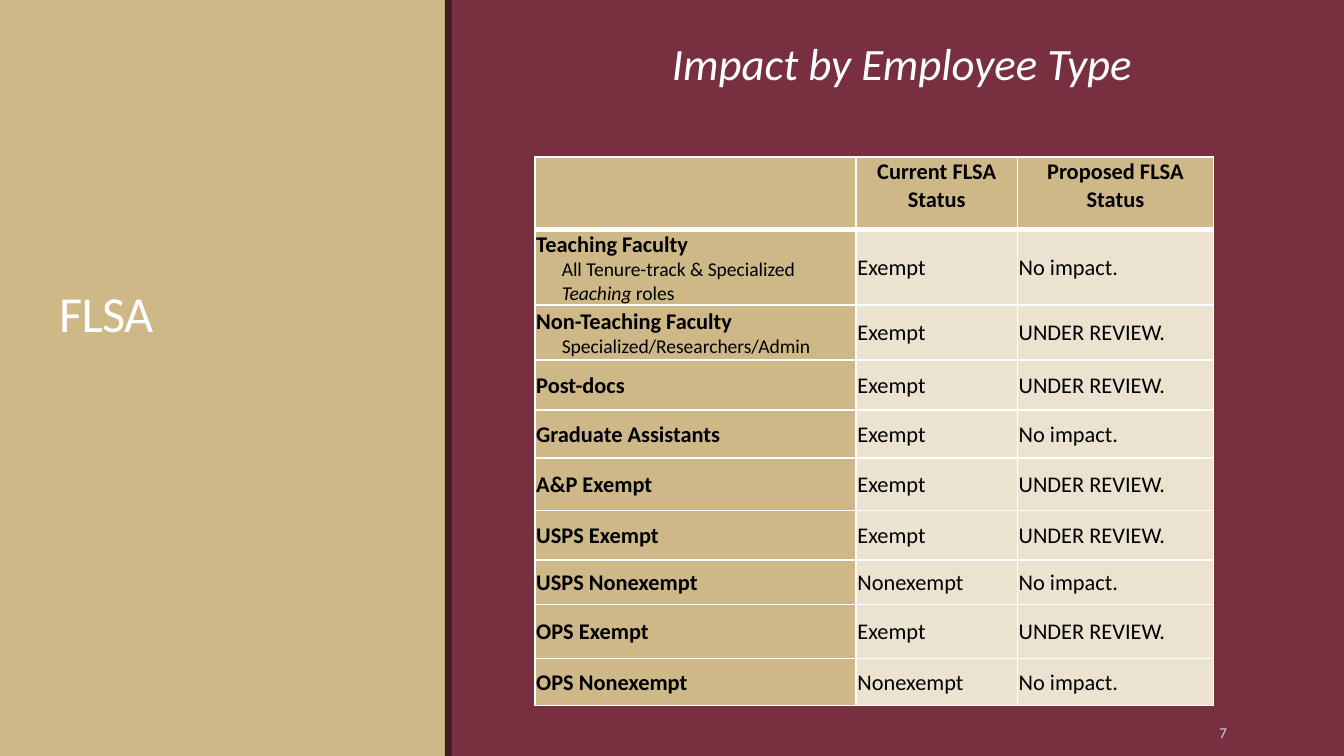
from lxml import etree
from pptx import Presentation
from pptx.dml.color import RGBColor
from pptx.enum import shapes, text
from pptx.oxml.ns import qn
from pptx.util import Inches, Pt

THEME = {
    "font": "Calibri",
    "maroon": "782F40", "dark": "421A24", "gold": "CEB888", "cream": "EBE3CF",
    "white": "FFFFFF", "black": "000000", "grey": "D9D9DB",
    "section": 27, "heading": 24, "body": 12, "detail": 10.5, "number": 8,
}

SECTION = "FLSA"
HEADING = "Impact by Employee Type"
PAGE_NUMBER = "7"
HEADERS = ["", "Current FLSA Status", "Proposed FLSA Status"]
NONE, REVIEW = "No impact.", "UNDER REVIEW."
# Employee type, detail lines (each a list of run text and italic), current, proposed, height
EMPLOYEES = [
    ("Teaching Faculty",
     [[("All Tenure-track & Specialized", False)],
      [("Teaching", True), (" roles", False)]], "Exempt", NONE, 0.56),
    ("Non-Teaching Faculty",
     [[("Specialized/Researchers/Admin", False)]], "Exempt", REVIEW, 0.41),
    ("Post-docs", [], "Exempt", REVIEW, 0.37),
    ("Graduate Assistants", [], "Exempt", NONE, 0.36),
    ("A&P Exempt", [], "Exempt", REVIEW, 0.39),
    ("USPS Exempt", [], "Exempt", REVIEW, 0.37),
    ("USPS Nonexempt", [], "Nonexempt", NONE, 0.33),
    ("OPS Exempt", [], "Exempt", REVIEW, 0.4),
    ("OPS Nonexempt", [], "Nonexempt", NONE, 0.35),
]
SLIDE_WIDTH = 10
SLIDE_HEIGHT = SLIDE_WIDTH * 9 / 16
COLUMN_WIDTHS = [2.39, 1.2, 1.46]
HEADER_HEIGHT = 0.54
DETAIL_INDENT = 0.19


def color(name):
    return RGBColor.from_string(THEME[name])


def style(run, size, ink, bold=False, italic=False):
    font = run.font
    font.name, font.size = THEME["font"], Pt(THEME[size])
    font.bold, font.italic = bold, italic
    font.color.rgb = color(ink)


def add_panel(slide, left, width, fill):
    panel = slide.shapes.add_shape(shapes.MSO_SHAPE.RECTANGLE, Inches(left), 0,
                                   Inches(width), Inches(SLIDE_HEIGHT))
    panel.shadow.inherit = False
    panel.fill.solid()
    panel.fill.fore_color.rgb = color(fill)
    panel.line.fill.background()


def add_label(slide, box, words, size, ink, align, anchor, insets, italic=False):
    label = slide.shapes.add_textbox(*map(Inches, box))
    frame = label.text_frame
    frame.word_wrap = True
    frame.vertical_anchor = anchor
    frame.margin_left = frame.margin_right = Inches(insets[0])
    frame.margin_top = frame.margin_bottom = Inches(insets[1])
    frame.text = words
    paragraph = frame.paragraphs[0]
    paragraph.alignment = align
    style(paragraph.runs[0], size, ink, italic=italic)
    return paragraph


def dress_cell(cell, fill, bottom=1, top=1):
    cell.margin_left = cell.margin_right = cell.margin_top = Inches(0.01)
    cell.margin_bottom = 0
    properties = cell._tc.get_or_add_tcPr()
    for side, width in zip("LRTB", (1, 1, top, bottom)):
        border = etree.SubElement(properties, qn(f"a:ln{side}"), w=str(Pt(width)))
        solid = etree.SubElement(border, qn("a:solidFill"))
        etree.SubElement(solid, qn("a:srgbClr"), val=THEME["white"])
    cell.fill.solid()
    cell.fill.fore_color.rgb = color(fill)


def fill_cell(cell, words, bold, align, anchor):
    cell.text = words
    cell.vertical_anchor = anchor
    paragraph = cell.text_frame.paragraphs[0]
    paragraph.alignment = align
    for run in paragraph.runs:
        style(run, "body", "black", bold=bold)


def add_details(cell, lines):
    for line in lines:
        paragraph = cell.text_frame.add_paragraph()
        paragraph._p.get_or_add_pPr().set("marL", str(Inches(DETAIL_INDENT)))
        for words, italic in line:
            run = paragraph.add_run()
            run.text = words
            style(run, "detail", "black", italic=italic)


def add_status_table(slide):
    heights = [HEADER_HEIGHT] + [employee[-1] for employee in EMPLOYEES]
    table = slide.shapes.add_table(
        len(heights), len(COLUMN_WIDTHS), Inches(3.98), Inches(1.17),
        Inches(sum(COLUMN_WIDTHS)), Inches(sum(heights))).table
    for column, width in zip(table.columns, COLUMN_WIDTHS):
        column.width = Inches(width)
    for row, height in zip(table.rows, heights):
        row.height = Inches(height)

    # Header row
    for col, header in enumerate(HEADERS):
        cell = table.cell(0, col)
        dress_cell(cell, "gold", bottom=3)
        fill_cell(cell, header, True, text.PP_ALIGN.CENTER, text.MSO_ANCHOR.TOP)

    # One row per employee type
    for row, (employee, details, current, proposed, _) in enumerate(EMPLOYEES, 1):
        for col, words in enumerate((employee, current, proposed)):
            cell = table.cell(row, col)
            dress_cell(cell, "cream" if col else "gold", top=3 if row == 1 else 1)
            fill_cell(cell, words, col == 0, text.PP_ALIGN.LEFT, text.MSO_ANCHOR.MIDDLE)
        add_details(table.cell(row, 0), details)


def main():
    deck = Presentation()
    deck.slide_width, deck.slide_height = Inches(SLIDE_WIDTH), Inches(SLIDE_HEIGHT)
    slide = deck.slides.add_slide(deck.slide_layouts[6])
    slide.background.fill.solid()
    slide.background.fill.fore_color.rgb = color("maroon")

    # Side panel and its edge
    add_panel(slide, 0, 3.32, "gold")
    add_panel(slide, 3.31, 0.05, "dark")

    # Page number, section name and heading
    align, anchor = text.PP_ALIGN, text.MSO_ANCHOR
    add_label(slide, (8.12, 5.3, 1.08, 0.3), PAGE_NUMBER, "number", "grey",
              align.RIGHT, anchor.MIDDLE, (0.07, 0.04))
    section = add_label(slide, (0.37, 0.71, 2.62, 1.88), SECTION, "section", "white",
                        align.LEFT, anchor.BOTTOM, (0.07, 0.04))
    section.line_spacing = 0.85
    section.runs[0].font._element.set("spc", "-40")
    add_status_table(slide)
    add_label(slide, (3.56, 0.22, 6.3, 0.5), HEADING, "heading", "white",
              align.CENTER, anchor.TOP, (0.1, 0.05), italic=True)

    deck.save("out.pptx")


if __name__ == "__main__":
    main()
